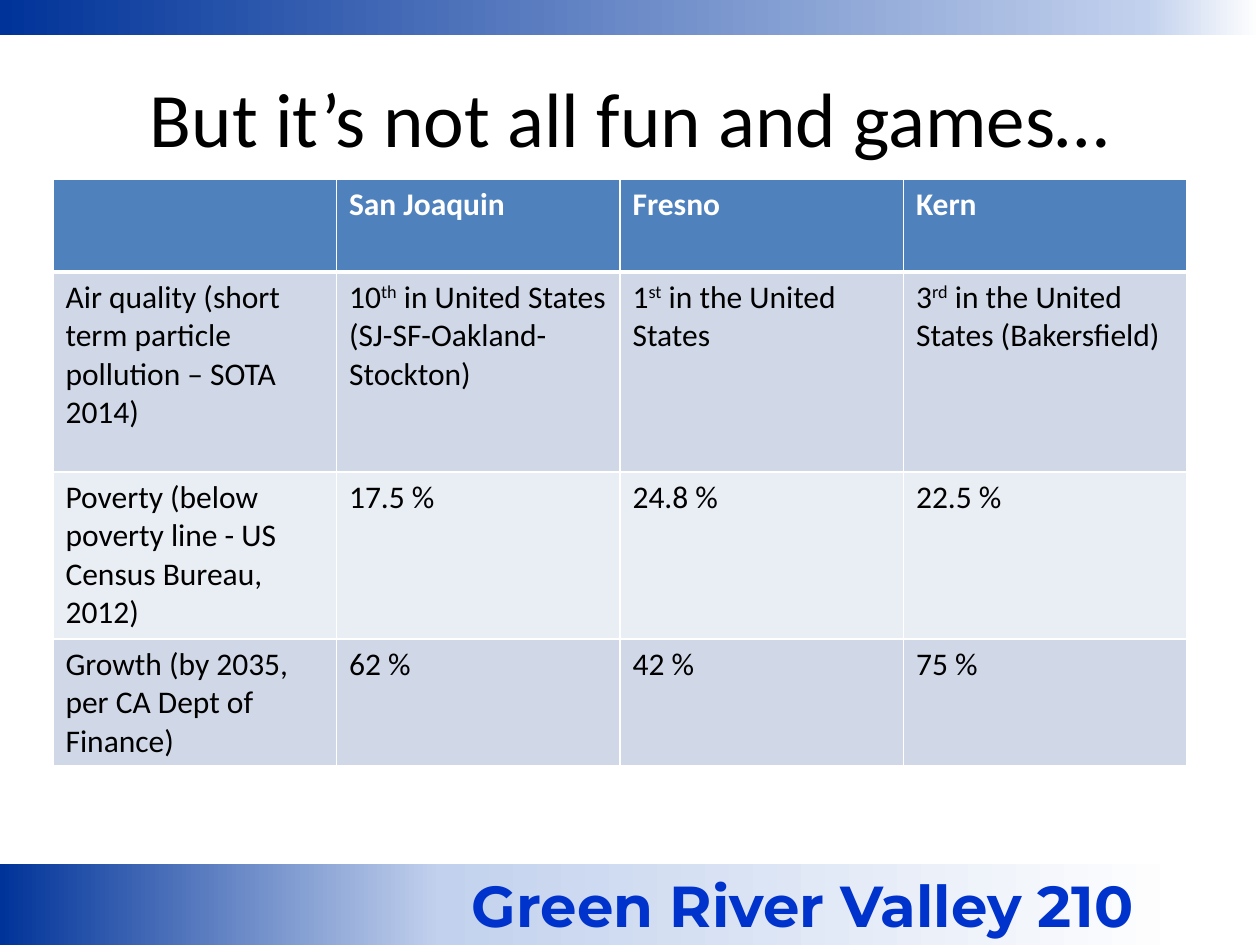
from typing import Any, NamedTuple

from lxml.etree import SubElement
from pptx import Presentation
from pptx.dml.color import RGBColor as Rgb
from pptx.enum.shapes import MSO_SHAPE as Shape
from pptx.enum.text import MSO_ANCHOR as Anchor, PP_ALIGN as Align
from pptx.oxml import parse_xml
from pptx.oxml.ns import nsdecls, qn
from pptx.util import Emu, Pt

PX_PER_INCH = 126
COLORS = {
    "navy": "003399", "pale": "C2D1ED", "white": "FFFFFF", "black": "000000",
    "region": "0033CC", "header": "4F81BD", "band": "D0D8E8", "light": "E9EDF4",
}


class Box(NamedTuple):
    left: int
    top: int
    width: int
    height: int


class Stop(NamedTuple):
    percent: int
    color: str


class Band(NamedTuple):
    box: Box
    stops: tuple[Stop, ...]


class Rank(NamedTuple):
    number: str
    ordinal: str
    place: str


class Row(NamedTuple):
    height: int
    fill: str
    entries: tuple[str | Rank, ...]


TOP_BAND = Band(Box(0, 0, 1260, 35),
                (Stop(0, "navy"), Stop(91, "pale"), Stop(100, "white")))
FOOTER_BAND = Band(Box(0, 864, 1260, 81),
                   (Stop(0, "navy"), Stop(35, "pale"), Stop(94, "white")))
TITLE_BOX = Box(63, 38, 1134, 157)
TABLE_LEFT, TABLE_TOP, TABLE_WIDTH = 53, 179, 1134

FOOTER_FONT = {"name": "Montserrat", "size": Pt(33), "bold": True}
TITLE_FONT = {"name": "Calibri", "size": Pt(44), "bold": False}
HEADER_FONT = {"name": "Calibri", "size": Pt(18), "bold": True}
BODY_FONT = HEADER_FONT | {"bold": False}

ROWS = (
    Row(93, "header", ("", "San Joaquin", "Fresno", "Kern")),
    Row(200, "band", (
        "Air quality (short term particle pollution – SOTA 2014)",
        Rank("10", "th", " in United States (SJ-SF-Oakland-Stockton)"),
        Rank("1", "st", " in the United States"),
        Rank("3", "rd", " in the United States (Bakersfield)"),
    )),
    Row(167, "light", ("Poverty (below poverty line - US Census Bureau, 2012)",
                       "17.5 %", "24.8 %", "22.5 %")),
    Row(127, "band", ("Growth (by 2035, per CA Dept of Finance)",
                      "62 %", "42 %", "75 %")),
)


def px(length: int) -> Emu:
    return Emu(round(length * 914400 / PX_PER_INCH))


def place(box: Box) -> list[Emu]:
    return [px(length) for length in box]


def rgb(color: str) -> Rgb:
    return Rgb.from_string(COLORS[color])


def apply(target: Any, values: dict[str, Any]) -> None:
    for attribute, value in values.items():
        setattr(target, attribute, value)


def add_text(paragraph: Any, text: str, font: dict[str, Any], color: str) -> Any:
    run = paragraph.add_run()
    run.text = text
    apply(run.font, font)
    run.font.color.rgb = rgb(color)
    return run


def draw_band(slide: Any, band: Band) -> Any:
    """Draw a borderless bar that fades from left to right."""
    bar = slide.shapes.add_shape(Shape.RECTANGLE, *place(band.box))
    bar.shadow.inherit = False
    bar.line.fill.background()
    bar.fill.gradient()
    bar.fill.gradient_angle = 0
    stop_list = next(bar.element.iter(qn("a:gsLst")))
    for old_stop in list(stop_list):
        stop_list.remove(old_stop)
    for percent, color in band.stops:
        stop = SubElement(stop_list, qn("a:gs"), pos=str(percent * 1000))
        SubElement(stop, qn("a:srgbClr"), val=COLORS[color])
    return bar


def draw_footer(slide: Any) -> None:
    frame = draw_band(slide, FOOTER_BAND).text_frame
    apply(frame, {"word_wrap": True, "vertical_anchor": Anchor.TOP,
                  "margin_top": px(6), "margin_bottom": px(6),
                  "margin_right": px(126)})
    program = frame.paragraphs[0]
    program.alignment = Align.RIGHT
    add_text(program, "Green River Valley 210", FOOTER_FONT, "region")


def draw_title(slide: Any) -> None:
    frame = slide.shapes.add_textbox(*place(TITLE_BOX)).text_frame
    apply(frame, {"word_wrap": True, "vertical_anchor": Anchor.MIDDLE})
    title = frame.paragraphs[0]
    title.alignment = Align.CENTER
    add_text(title, "But it’s not all fun and games…", TITLE_FONT, "black")


def set_borders(cell: Any, bottom: int, top: int) -> None:
    """Give the cell white borders; bottom and top are widths in points."""
    properties = cell._tc.get_or_add_tcPr()
    widths = {"lnL": 1, "lnR": 1, "lnT": top, "lnB": bottom}
    for position, (side, points) in enumerate(widths.items()):
        properties.insert(position, parse_xml(
            f'<a:{side} {nsdecls("a")} w="{Pt(points)}"><a:solidFill>'
            f'<a:srgbClr val="{COLORS["white"]}"/></a:solidFill></a:{side}>'))


def fill_entry(paragraph: Any, entry: str | Rank,
               font: dict[str, Any], color: str) -> None:
    if isinstance(entry, Rank):
        number, ordinal, place_name = (
            add_text(paragraph, part, font, color) for part in entry)
        ordinal.font._element.set("baseline", "30000")
    elif entry:
        add_text(paragraph, entry, font, color)


def draw_table(slide: Any) -> None:
    column_count = len(ROWS[0].entries)
    box = Box(TABLE_LEFT, TABLE_TOP, TABLE_WIDTH, sum(row.height for row in ROWS))
    table = slide.shapes.add_table(len(ROWS), column_count, *place(box)).table
    for column in table.columns:
        column.width = px(TABLE_WIDTH) // column_count
    for row_index, row in enumerate(ROWS):
        table.rows[row_index].height = px(row.height)
        is_header = row_index == 0
        font, color = (HEADER_FONT, "white") if is_header else (BODY_FONT, "black")
        for column_index, entry in enumerate(row.entries):
            cell = table.cell(row_index, column_index)
            cell.fill.solid()
            cell.fill.fore_color.rgb = rgb(row.fill)
            set_borders(cell, bottom=3 if is_header else 1,
                        top=3 if row_index == 1 else 1)
            fill_entry(cell.text_frame.paragraphs[0], entry, font, color)


def main() -> None:
    deck = Presentation()
    apply(deck, {"slide_width": px(1260), "slide_height": px(945)})
    slide = deck.slides.add_slide(deck.slide_layouts[6])
    draw_footer(slide)
    draw_band(slide, TOP_BAND)
    draw_title(slide)
    draw_table(slide)
    deck.save("out.pptx")


if __name__ == "__main__":
    main()
